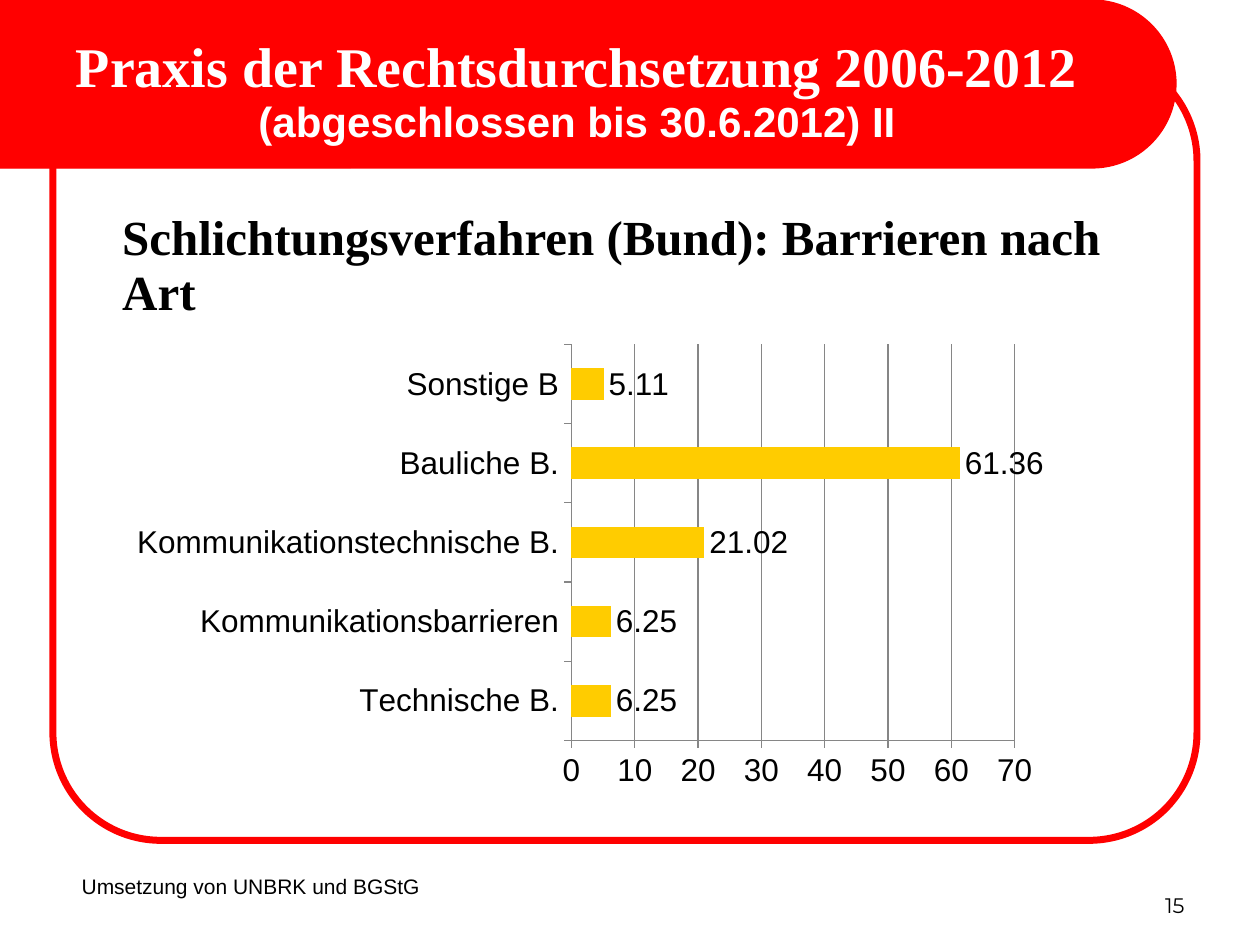
from pptx import Presentation, util as u
from pptx.chart.data import CategoryChartData
from pptx.dml.color import RGBColor
from pptx.enum import chart as charts, shapes, text
from pptx.oxml.ns import qn
from lxml import etree

WIDTH, HEIGHT = u.Inches(10), u.Inches(7.5)
RED, YELLOW, GRAY, BLACK, WHITE = "FF0000", "FFCC00", "868686", "000000", "FFFFFF"
BARRIERS = {
    "Technische B.": 6.25,
    "Kommunikationsbarrieren": 6.25,
    "Kommunikationstechnische B.": 21.02,
    "Bauliche B.": 61.36,
    "Sonstige B": 5.11,
}


def color(value):
    return RGBColor.from_string(value)


def box(left, top, width, height):
    return [round(share * size / 100) for share, size in
            zip((left, top, width, height), (WIDTH, HEIGHT) * 2)]


def style_font(font, size, name="Arial", fill=BLACK, bold=False):
    font.size, font.name, font.bold = u.Pt(size), name, bold
    font.color.rgb = color(fill)


def add_run(paragraph, content, **style):
    run = paragraph.add_run()
    run.text = content
    style_font(run.font, **style)


def set_frame(frame, anchor, inset):
    frame.word_wrap = True
    frame.auto_size = text.MSO_AUTO_SIZE.NONE
    frame.vertical_anchor = anchor
    if not inset:
        frame.margin_left = frame.margin_right = 0
        frame.margin_top = frame.margin_bottom = 0


def add_text(slide, position, content, anchor=text.MSO_ANCHOR.BOTTOM,
             align=text.PP_ALIGN.LEFT, inset=True, spacing=1.0, **style):
    frame = slide.shapes.add_textbox(*position).text_frame
    set_frame(frame, anchor, inset)
    paragraph = frame.paragraphs[0]
    paragraph.alignment, paragraph.line_spacing = align, spacing
    add_run(paragraph, content, **style)


def add_frame(slide):
    frame = slide.shapes.add_shape(
        shapes.MSO_SHAPE.ROUNDED_RECTANGLE, *box(4.2, 5.6, 90.8, 83.33))
    frame.adjustments[0] = 0.137
    frame.shadow.inherit = False
    frame.fill.background()
    frame.line.color.rgb = color(RED)
    frame.line.width = u.Pt(4)


def add_banner(slide):
    left, top, width, height = box(0, 0, 93.33, 17.78)
    shift = (width - height) // 2
    banner = slide.shapes.add_shape(
        shapes.MSO_SHAPE.ROUND_2_SAME_RECTANGLE,
        left + shift, top - shift, height, width)
    banner.rotation = 90
    banner.adjustments[0] = 0.5
    banner.shadow.inherit = False
    banner.fill.solid()
    banner.fill.fore_color.rgb = color(RED)
    banner.line.color.rgb = color(RED)
    banner.line.width = u.Pt(0.75)

    start_x, y, length, _ = box(0, 15.6, 88.3, 0)
    rule = slide.shapes.add_connector(
        shapes.MSO_CONNECTOR.STRAIGHT, start_x, y, start_x + length, y)
    rule.line.color.rgb = color(RED)
    rule.line.width = u.Pt(3)
    etree.SubElement(rule._element.spPr, qn("a:effectLst"))


def format_title(slide):
    title = slide.shapes.title
    title.left, title.top, title.width, title.height = box(3.9, 4, 83.8, 11.6)
    set_frame(title.text_frame, text.MSO_ANCHOR.MIDDLE, inset=False)
    paragraph = title.text_frame.paragraphs[0]
    paragraph.alignment, paragraph.line_spacing = text.PP_ALIGN.CENTER, 0.93
    add_run(paragraph, "Praxis der Rechtsdurchsetzung 2006-2012 ",
            size=32, name="Times New Roman", fill=WHITE, bold=True)
    add_run(paragraph, "(abgeschlossen bis 30.6.2012) II",
            size=24, fill=WHITE, bold=True)
    slide.shapes._spTree.append(title._element)


def add_barrier_chart(slide):
    data = CategoryChartData()
    data.categories = list(BARRIERS)
    data.add_series("Series 1", list(BARRIERS.values()))
    chart = slide.shapes.add_chart(
        charts.XL_CHART_TYPE.BAR_CLUSTERED, *box(9.4, 35.47, 74, 48.93), data).chart
    chart.has_title = chart.has_legend = False
    style_font(chart.font, 18)

    plot = chart.plots[0]
    plot.gap_width, plot.vary_by_categories = 150, False
    series = plot.series[0]
    series.format.fill.solid()
    series.format.fill.fore_color.rgb = color(YELLOW)
    labels = series.data_labels
    labels.show_value = True
    labels.position = charts.XL_LABEL_POSITION.OUTSIDE_END
    style_font(labels.font, 18)

    values = chart.value_axis
    values.minimum_scale, values.maximum_scale, values.major_unit = 0, 70, 10
    values.has_major_gridlines = True
    for part in (values, values.major_gridlines, chart.category_axis):
        part.format.line.color.rgb = color(GRAY)
        part.format.line.width = u.Pt(0.75)
    for axis in (values, chart.category_axis):
        axis.major_tick_mark = charts.XL_TICK_MARK.OUTSIDE
        style_font(axis.tick_labels.font, 18)


def main():
    presentation = Presentation()
    presentation.slide_width, presentation.slide_height = WIDTH, HEIGHT
    slide = presentation.slides.add_slide(presentation.slide_layouts[5])
    add_frame(slide)
    add_banner(slide)
    add_text(slide, box(71.7, 91.07, 23.3, 6.67), "15",
             align=text.PP_ALIGN.RIGHT, size=12, name="Montserrat")
    format_title(slide)
    add_text(slide, box(9.7, 22.4, 82.9, 12),
             "Schlichtungsverfahren (Bund): Barrieren nach Art",
             anchor=text.MSO_ANCHOR.TOP, inset=False, spacing=0.93,
             size=28, name="Times New Roman", bold=True)
    add_barrier_chart(slide)
    add_text(slide, box(5.5, 89.6, 29.4, 6.13), "Umsetzung von UNBRK und BGStG", size=12)
    presentation.save("out.pptx")


if __name__ == "__main__":
    main()
